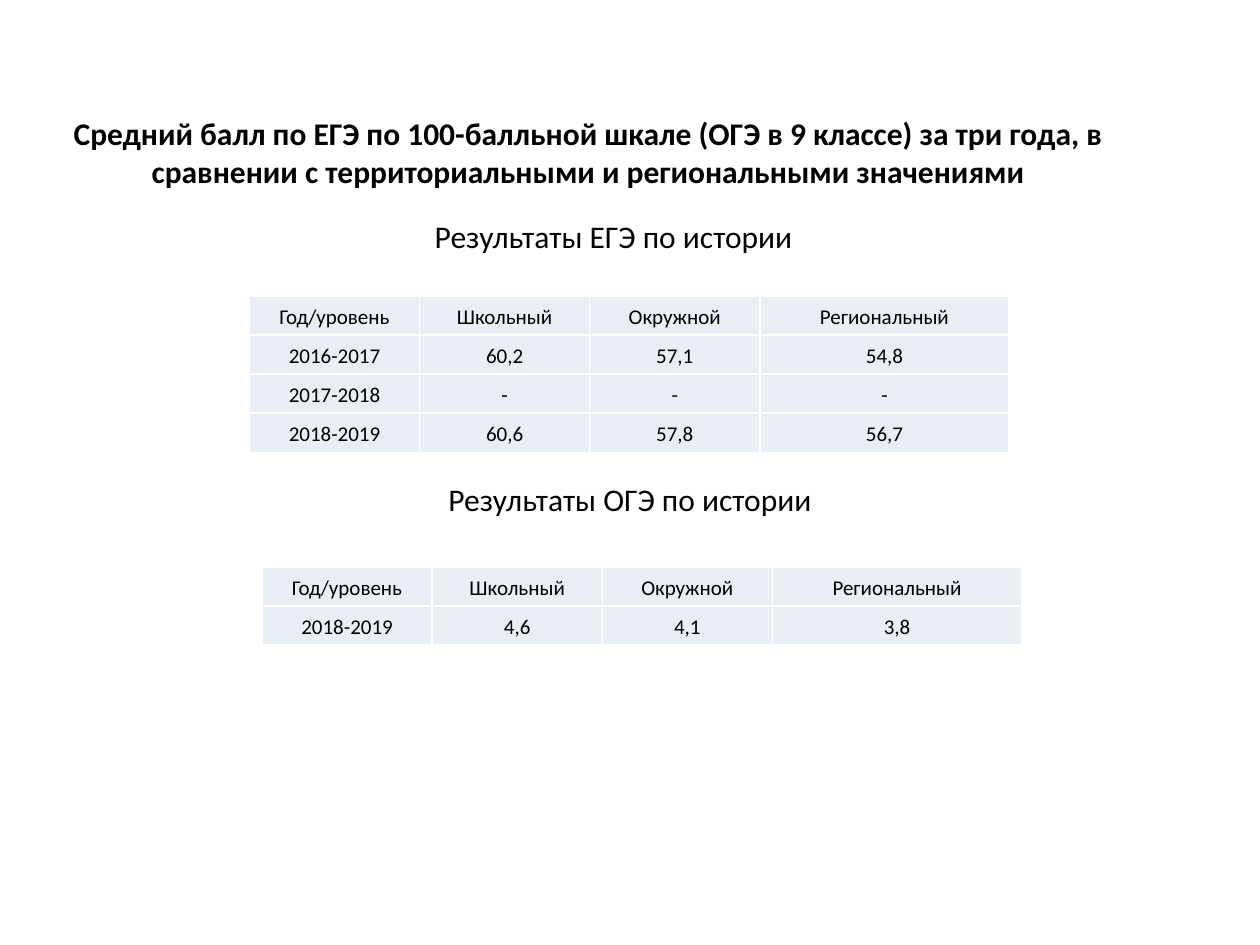
from pptx import Presentation
from pptx.dml.color import RGBColor
from pptx.enum.text import MSO_ANCHOR, PP_ALIGN
from pptx.util import Inches, Pt

COLORS = {"text": "000000", "cell": "E9EDF4"}
HEADER = ["Год/уровень", "Школьный", "Окружной", "Региональный"]
COL_WIDTHS = [1.35, 1.35, 1.35, 1.98]
ROW_HEIGHT = 0.31

prs = Presentation()
prs.slide_width, prs.slide_height = Inches(10), Inches(7.5)
s = prs.slides.add_slide(prs.slide_layouts[6])


def write(p, text, size, bold=False):
    p.text = text
    p.alignment = PP_ALIGN.CENTER
    p.font.name = "Calibri"
    p.font.size = Pt(size)
    p.font.bold = bold
    p.font.color.rgb = RGBColor.from_string(COLORS["text"])


title = ("Средний балл по ЕГЭ по 100-балльной шкале (ОГЭ в 9 классе) за три года, "
         "в сравнении с территориальными и региональными значениями")
texts = [
    (title, 0.42, 0.58, 8.5, 1.25, True),
    ("Результаты ЕГЭ по истории", 3.33, 1.67, 3.08, 0.4, False),
    ("Результаты ОГЭ по истории", 3.44, 3.76, 3.12, 0.4, False),
]
for text, x, y, w, h, is_title in texts:
    tf = s.shapes.add_textbox(Inches(x), Inches(y), Inches(w), Inches(h)).text_frame
    tf.word_wrap = is_title
    tf.vertical_anchor = MSO_ANCHOR.MIDDLE if is_title else MSO_ANCHOR.TOP
    write(tf.paragraphs[0], text, 18, is_title)

ege_results = [
    ["2016-2017", "60,2", "57,1", "54,8"],
    ["2017-2018", "-", "-", "-"],
    ["2018-2019", "60,6", "57,8", "56,7"],
]
oge_results = [["2018-2019", "4,6", "4,1", "3,8"]]

for x, y, results in [(1.98, 2.35, ege_results), (2.08, 4.5, oge_results)]:
    rows = [HEADER] + results
    table = s.shapes.add_table(
        len(rows), len(HEADER), Inches(x), Inches(y),
        Inches(sum(COL_WIDTHS)), Inches(ROW_HEIGHT * len(rows))).table
    table.first_row = table.horz_banding = False
    for column, width in zip(table.columns, COL_WIDTHS):
        column.width = Inches(width)
    for i, values in enumerate(rows):
        table.rows[i].height = Inches(ROW_HEIGHT)
        for j, value in enumerate(values):
            cell = table.cell(i, j)
            cell.fill.solid()
            cell.fill.fore_color.rgb = RGBColor.from_string(COLORS["cell"])
            cell.margin_left = cell.margin_right = Inches(0.04)
            cell.margin_top = cell.margin_bottom = Inches(0.04)
            p = cell.text_frame.paragraphs[0]
            write(p, value, 12)
            p.line_spacing = 1.15
            p.space_after = Pt(10)

prs.save("out.pptx")
